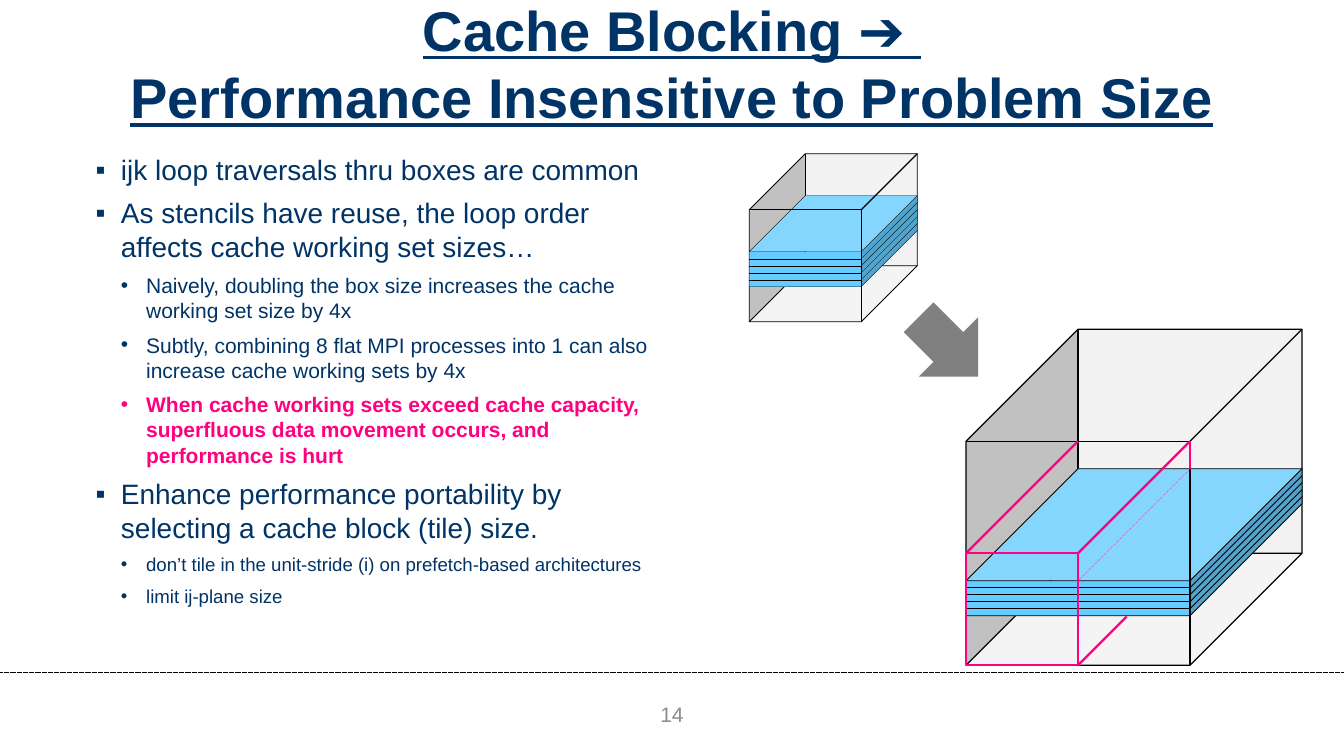
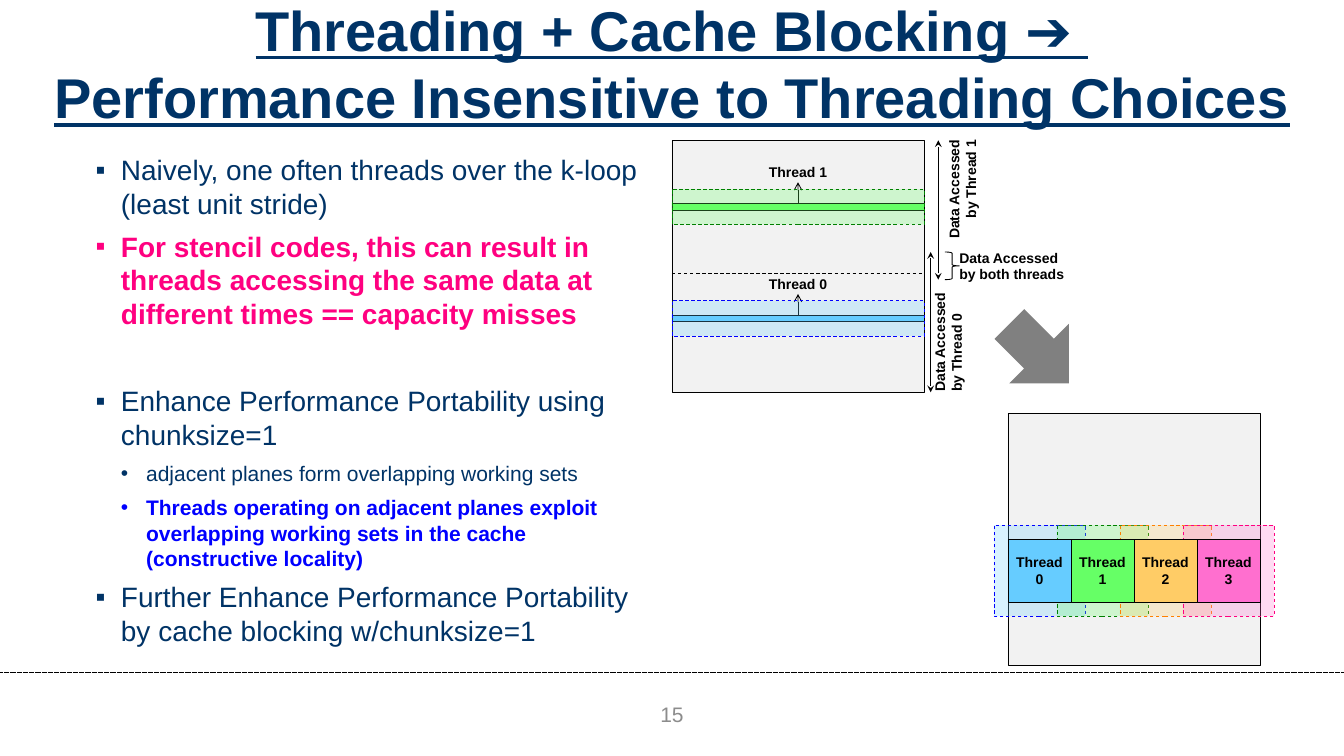
from pptx import Presentation
from pptx.dml.color import RGBColor
from pptx.enum.dml import MSO_LINE
from pptx.enum.shapes import MSO_CONNECTOR, MSO_SHAPE
from pptx.enum.text import MSO_ANCHOR, PP_ALIGN
from pptx.oxml.ns import qn
from pptx.util import Inches, Pt

STRAIGHT = MSO_CONNECTOR.STRAIGHT
RECTANGLE, CUBE = MSO_SHAPE.RECTANGLE, MSO_SHAPE.CUBE
DOWN_ARROW, RIGHT_BRACE = MSO_SHAPE.DOWN_ARROW, MSO_SHAPE.RIGHT_BRACE
DASH, DOT = MSO_LINE.DASH, MSO_LINE.ROUND_DOT
LEFT, CENTER, RIGHT = PP_ALIGN.LEFT, PP_ALIGN.CENTER, PP_ALIGN.RIGHT
TOP, MIDDLE = MSO_ANCHOR.TOP, MSO_ANCHOR.MIDDLE

NAVY = RGBColor(0x00, 0x33, 0x66)
BLACK = RGBColor(0x00, 0x00, 0x00)
GRAY = RGBColor(0x80, 0x80, 0x80)
NUMBER_GRAY = RGBColor(0x8C, 0x8C, 0x8C)
PALE = RGBColor(0xF2, 0xF2, 0xF2)
PINK = RGBColor(0xFF, 0x00, 0x80)
BLUE = RGBColor(0x00, 0x00, 0xFF)
SKY = RGBColor(0x66, 0xCC, 0xFF)
DARK_GREEN = RGBColor(0x00, 0x80, 0x00)
GREEN = RGBColor(0x66, 0xFF, 0x66)
DARK_ORANGE = RGBColor(0xFF, 0x80, 0x00)
ORANGE = RGBColor(0xFF, 0xCC, 0x66)
LIGHT_PINK = RGBColor(0xFF, 0x6F, 0xCF)

FONT = "Arial"
THREAD_COLORS = [(SKY, BLUE), (GREEN, DARK_GREEN),
                 (ORANGE, DARK_ORANGE), (LIGHT_PINK, PINK)]
BULLETS = {1: "▪", 2: "•"}
INDENT = 0.3
LAYERS = 5


def style_paragraph(paragraph, size, color, bold=False, align=LEFT):
    paragraph.alignment = align
    font = paragraph.font
    font.name, font.size, font.bold = FONT, Pt(size), bold
    font.color.rgb = color


def set_frame(frame, anchor, margins=(0, 0), wrap=True):
    frame.word_wrap = wrap
    frame.vertical_anchor = anchor
    frame.margin_left = frame.margin_right = Inches(margins[0])
    frame.margin_top = frame.margin_bottom = Inches(margins[1])


def add_text(slide, box, text, size, color, bold=False, align=CENTER,
             margins=(0.14, 0.07), wrap=True):
    text_box = slide.shapes.add_textbox(*map(Inches, box))
    set_frame(text_box.text_frame, MIDDLE, margins, wrap)
    paragraph = text_box.text_frame.paragraphs[0]
    paragraph.text = text
    style_paragraph(paragraph, size, color, bold, align)
    return text_box


def add_label(slide, box, text, align=LEFT, wrap=True, rotation=0):
    label = add_text(slide, box, text, 12, BLACK, True, align, (0, 0), wrap)
    label.rotation = rotation
    return label


def add_bullets(slide, box, items):
    """Each item is (level, size, text), then optionally a highlight colour."""
    frame = slide.shapes.add_textbox(*map(Inches, box)).text_frame
    set_frame(frame, TOP, (0.14, 0.07))
    for index, (level, size, text, *highlight) in enumerate(items):
        paragraph = frame.add_paragraph() if index else frame.paragraphs[0]
        paragraph.text = text
        if index:
            paragraph.space_before = Pt(8)
        properties = paragraph._p.get_or_add_pPr()
        properties.set("marL", str(Inches(level * INDENT)))
        properties.set("indent", str(-Inches(INDENT)))
        bullet_font = properties.makeelement(qn("a:buFont"), {"typeface": FONT})
        bullet = properties.makeelement(qn("a:buChar"), {"char": BULLETS[level]})
        properties.extend([bullet_font, bullet])
        style_paragraph(paragraph, size, highlight[0] if highlight else NAVY,
                        bool(highlight))


def add_line(slide, start, end, width=0.75, color=BLACK, dash=None,
             head=None, tail=None):
    line = slide.shapes.add_connector(STRAIGHT, *map(Inches, (*start, *end)))
    line.line.width = Pt(width)
    line.line.color.rgb = color
    if dash:
        line.line.dash_style = dash
    properties = line.element.spPr
    outline = properties.find(qn("a:ln"))
    for tag, kind in (("a:headEnd", head), ("a:tailEnd", tail)):
        if kind:
            outline.append(outline.makeelement(qn(tag), {"type": kind}))
    properties.append(properties.makeelement(qn("a:effectLst"), {}))
    return line


def add_shape(slide, kind, box, fill=None, outline=None, width=0.75,
              dash=None, opacity=None):
    shape = slide.shapes.add_shape(kind, *map(Inches, box))
    shape.shadow.inherit = False
    if fill is None:
        shape.fill.background()
    else:
        shape.fill.solid()
        shape.fill.fore_color.rgb = fill
    if opacity:
        color = shape.element.spPr.find(qn("a:solidFill")).find(qn("a:srgbClr"))
        color.append(color.makeelement(qn("a:alpha"), {"val": str(opacity * 1000)}))
    if outline is None:
        shape.line.fill.background()
    else:
        shape.line.color.rgb = outline
        shape.line.width = Pt(width)
        if dash:
            shape.line.dash_style = dash
    return shape


def add_step_arrow(slide, left, top):
    add_shape(slide, DOWN_ARROW, (left, top, 1, 1), GRAY).rotation = 315


def add_slide(deck, title, number):
    """Add a blank slide with the shared title, footer rule and number."""
    slide = deck.slides.add_slide(deck.slide_layouts[6])
    add_line(slide, (0, 8), (16, 8), 0.5, dash=DOT)
    heading = add_text(slide, (0.5, 0, 15, 1.5), title, 48, NAVY, True)
    heading.text_frame.paragraphs[0].font.underline = True
    add_text(slide, (6.5, 8.25, 3, 0.5), str(number), 18, NUMBER_GRAY)
    return slide


def add_box_with_planes(slide, left, top, size, slab_top, box_width, layer_width):
    """Draw an open box holding a slab of stacked ij-planes."""
    depth, thickness = size / 3, 5 / 12
    right, bottom = left + size, top + size
    front_right, front_top = right - depth, top + depth

    box = add_shape(slide, CUBE, (left, top, size, size), PALE, BLACK, box_width)
    box.rotation = 180
    box.adjustments[0] = 1 / 3
    slab_height = depth + thickness
    slab = add_shape(slide, CUBE, (left, slab_top, size, slab_height),
                     SKY, BLACK, layer_width)
    slab.adjustments[0] = depth / slab_height
    for layer in range(1, LAYERS):
        back = slab_top + layer * thickness / LAYERS
        front = back + depth
        add_line(slide, (left, front), (front_right, front), layer_width)
        add_line(slide, (right, back), (front_right, front), layer_width)

    front_corner = (front_right, front_top)
    for edge_end in ((left, front_top), (front_right, bottom), (right, top)):
        add_line(slide, edge_end, front_corner, 1)


def add_cache_block(slide, left, bottom, size):
    """Outline the tile at the front lower left of the large box."""
    middle, right = left + size, left + 2 * size
    top, back_top = bottom - size, bottom - 2 * size
    slab_back = back_top + 0.33
    add_line(slide, (right, slab_back), (middle, slab_back + size),
             0.25, PINK, DASH)
    for start, end in [
        ((left, top), (middle, top)),
        ((middle, top), (middle, bottom)),
        ((middle + 0.58, bottom - 0.58), (middle, bottom)),
        ((right, back_top), (right, slab_back)),
        ((right, back_top), (middle, top)),
        ((middle, back_top), (left, top)),
        ((left, bottom), (middle, bottom)),
        ((left, top), (left, bottom)),
    ]:
        add_line(slide, start, end, 2, PINK)


def add_thread_plane(slide, thread, top):
    """Draw a thread's current plane, its working set and its direction."""
    fill, outline = THREAD_COLORS[thread]
    plane = add_shape(slide, RECTANGLE, (8, top, 3, 0.08), fill, BLACK)
    label = add_label(slide, (9, top - 0.5, 1, 0.25), f"Thread {thread}",
                      CENTER, wrap=False)
    direction = add_line(slide, (9.5, top), (9.5, top - 0.25), tail="arrow")
    direction.begin_connect(plane, 0)
    direction.end_connect(label, 2)
    add_shape(slide, RECTANGLE, (8, top - 0.17, 3, 0.42), fill, outline,
              dash=DASH, opacity=25)


def add_thread_range(slide, thread, x, top, bottom, label_box, align):
    add_line(slide, (x, bottom), (x, top), head="stealth", tail="stealth")
    add_label(slide, label_box, f"Data Accessed by Thread {thread}", align,
              rotation=270)


def add_adjacent_threads(slide, left, top, size):
    halo = 1 / 6
    for thread, (fill, outline) in enumerate(THREAD_COLORS):
        add_shape(slide, RECTANGLE,
                  (left + thread * size - halo, top - halo,
                   size + 2 * halo, size + 2 * halo),
                  fill, outline, dash=DASH, opacity=25)
    for thread, (fill, _) in enumerate(THREAD_COLORS):
        block = add_shape(slide, RECTANGLE,
                          (left + thread * size, top, size, size),
                          fill, BLACK, 0.25)
        frame = block.text_frame
        set_frame(frame, MIDDLE, wrap=False)
        frame.text = f"Thread\n{thread}"
        for paragraph in frame.paragraphs:
            style_paragraph(paragraph, 12, BLACK, True, CENTER)


def build_cache_blocking(deck):
    slide = add_slide(
        deck, "Cache Blocking ➔ \vPerformance Insensitive to Problem Size", 14)
    add_bullets(slide, (1, 1.75, 7, 5.75), [
        (1, 24, "ijk loop traversals thru boxes are common"),
        (1, 24, "As stencils have reuse, the loop order affects cache working set sizes…"),
        (2, 18, "Naively, doubling the box size increases the cache working set size by 4x"),
        (2, 18, "Subtly, combining 8 flat MPI processes into 1 can also increase "
                "cache working sets by 4x"),
        (2, 18, "When cache working sets exceed cache capacity, superfluous data "
                "movement occurs, and performance is hurt", PINK),
        (1, 24, "Enhance performance portability by selecting a cache block (tile) size."),
        (2, 16, "don’t tile in the unit-stride (i) on prefetch-based architectures"),
        (2, 16, "limit ij-plane size"),
    ])
    add_box_with_planes(slide, 8.92, 1.83, 2, 2.33, 0.75, 0.25)
    add_box_with_planes(slide, 11.5, 3.92, 4, 5.58, 1, 0.75)
    add_step_arrow(slide, 10.79, 3.63)
    add_cache_block(slide, 11.5, 7.92, 4 / 3)


def build_threading(deck):
    slide = add_slide(
        deck, "Threading + Cache Blocking ➔ \v"
              "Performance Insensitive to Threading Choices", 15)
    add_bullets(slide, (1, 1.75, 7, 2.33), [
        (1, 24, "Naively, one often threads over the k-loop (least unit stride)"),
        (1, 24, "For stencil codes, this can result in threads accessing the same "
                "data at different times == capacity misses", PINK),
    ])
    add_bullets(slide, (1, 4.5, 7, 3), [
        (1, 24, "Enhance Performance Portability using chunksize=1"),
        (2, 18, "adjacent planes form overlapping working sets"),
        (2, 18, "Threads operating on adjacent planes exploit overlapping working "
                "sets in the cache (constructive locality)", BLUE),
        (1, 24, "Further Enhance Performance Portability by cache blocking w/chunksize=1"),
    ])

    add_shape(slide, RECTANGLE, (8, 1.67, 3, 3), PALE, BLACK)
    add_thread_range(slide, 0, 11.08, 3, 4.67, (10.62, 3.79, 1.33, 0.42), LEFT)
    add_thread_range(slide, 1, 11.17, 1.67, 3.33, (10.79, 2.12, 1.33, 0.42), RIGHT)
    add_label(slide, (11.42, 3, 1.33, 0.33), "Data Accessed by both threads")
    add_shape(slide, RIGHT_BRACE, (11.25, 3, 0.17, 0.33), outline=BLACK)
    add_line(slide, (8, 3.25), (11, 3.25), dash=DASH)
    add_thread_plane(slide, 1, 2.42)
    add_thread_plane(slide, 0, 3.75)

    add_step_arrow(slide, 11.87, 3.71)
    add_shape(slide, RECTANGLE, (12, 4.92, 3, 3), PALE, BLACK)
    add_adjacent_threads(slide, 12, 6.42, 0.75)


def main():
    deck = Presentation()
    deck.slide_width, deck.slide_height = Inches(16), Inches(9)
    build_cache_blocking(deck)
    build_threading(deck)
    deck.save("out.pptx")


if __name__ == "__main__":
    main()
